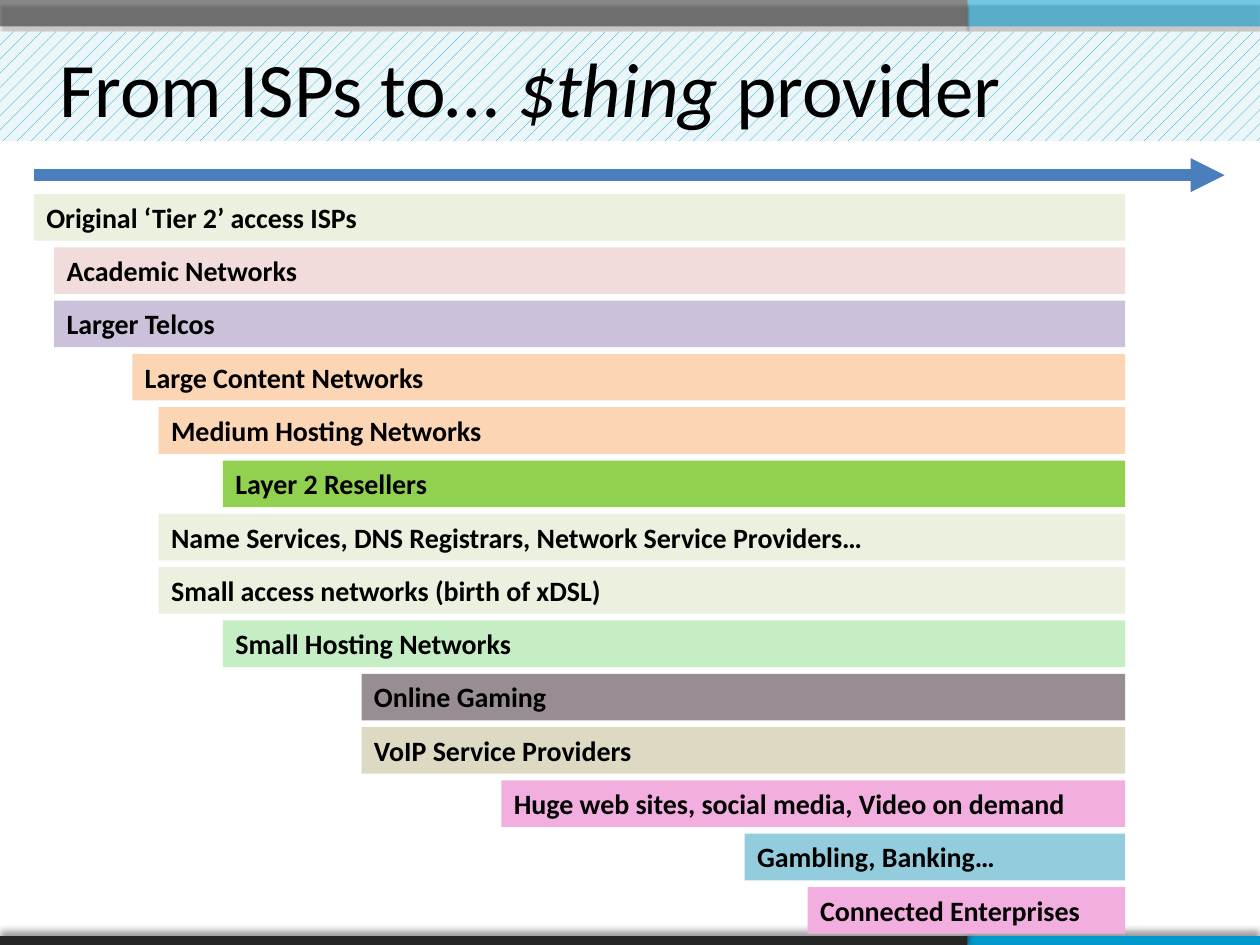
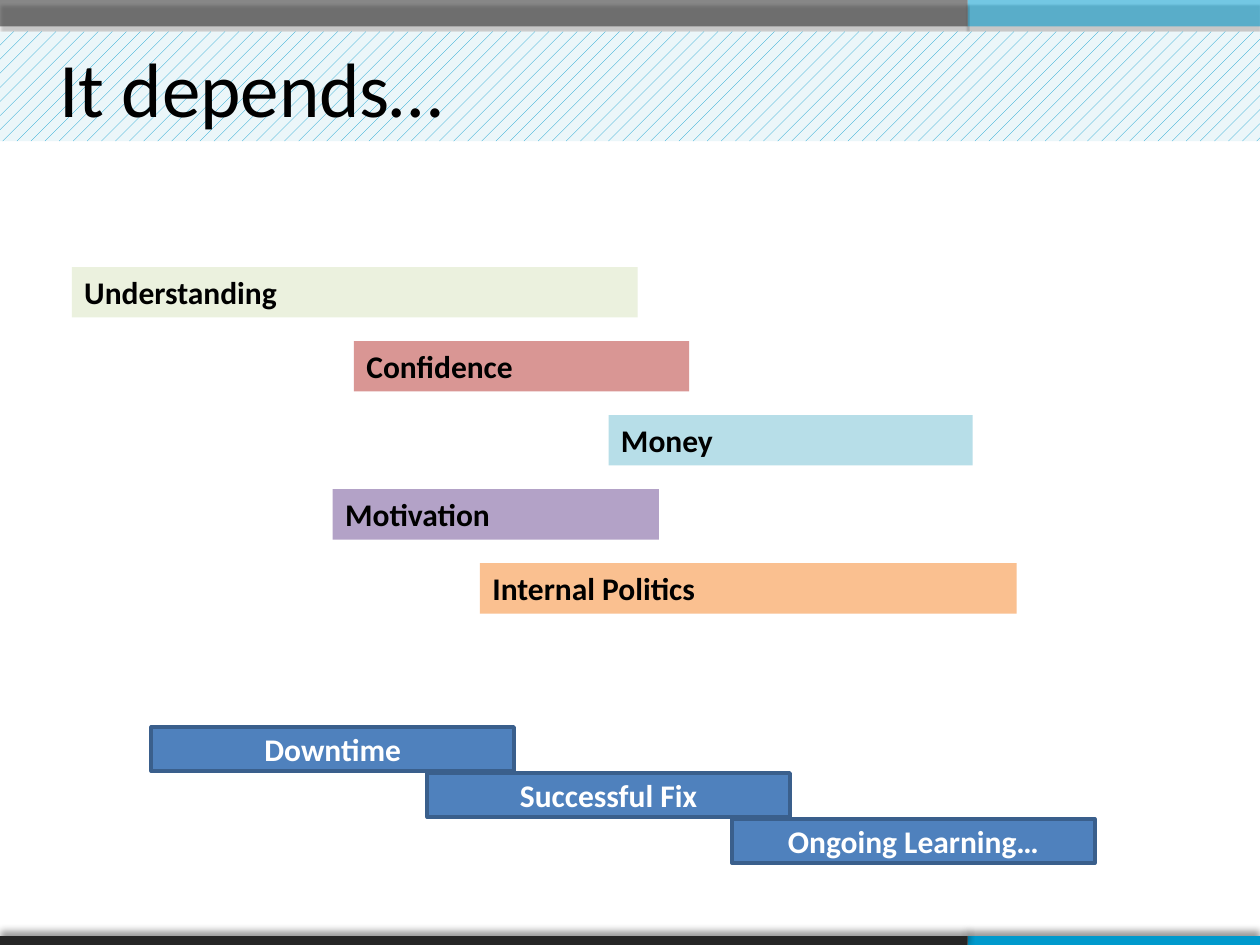
from dataclasses import dataclass
from typing import Optional

from lxml import etree
from pptx import Presentation
from pptx.dml.color import RGBColor
from pptx.enum import dml, shapes, text
from pptx.oxml import ns
from pptx.slide import Slide
from pptx import util as u

FONT = "Calibri"
BLACK = RGBColor(0x00, 0x00, 0x00)
WHITE = RGBColor(0xFF, 0xFF, 0xFF)
CHARCOAL = RGBColor(0x26, 0x26, 0x26)
CYAN = RGBColor(0x00, 0x99, 0xCC)
ICE = RGBColor(0xEB, 0xF6, 0xF9)
ARROW_BLUE = RGBColor(0x4B, 0x7E, 0xBC)
STEP_BLUE = RGBColor(0x4F, 0x81, 0xBD)
STEP_EDGE = RGBColor(0x3A, 0x5F, 0x8C)
PALE_GREEN = RGBColor(0xEB, 0xF1, 0xDE)
PALE_RED = RGBColor(0xF2, 0xDC, 0xDB)
LILAC = RGBColor(0xCC, 0xC1, 0xDA)
PEACH = RGBColor(0xFC, 0xD5, 0xB5)
LIME = RGBColor(0x92, 0xD0, 0x50)
MINT = RGBColor(0xC6, 0xEE, 0xC4)
TAUPE = RGBColor(0x97, 0x8D, 0x93)
SAND = RGBColor(0xDD, 0xD9, 0xC3)
PINK = RGBColor(0xF2, 0xAE, 0xDF)
SKY = RGBColor(0x93, 0xCD, 0xDD)
ROSE = RGBColor(0xD9, 0x96, 0x94)
PALE_BLUE = RGBColor(0xB7, 0xDE, 0xE8)
PURPLE = RGBColor(0xB3, 0xA2, 0xC7)
ORANGE = RGBColor(0xFA, 0xC0, 0x90)

SLIDE_WIDTH = 10
BAND_SPLIT = 7.68
PROVIDER_RIGHT = 8.93
PROVIDER_TOP, PROVIDER_PITCH = 1.54, 5.5 / 13
FACTOR_TOP, FACTOR_PITCH = 2.12, 2.35 / 4
STEP_TOP, STEP_PITCH = 5.77, 0.73 / 2
STEP_WIDTH, STEP_HEIGHT = 2.88, 0.35


@dataclass(frozen=True)
class Edge:
    top: float
    height: float
    blur: int
    distance: int
    angle: int
    opacity: Optional[int] = None


@dataclass(frozen=True)
class Bar:
    label: str
    left: float
    right: float
    color: RGBColor


@dataclass(frozen=True)
class Span:
    words: str
    italic: bool = False


EDGES = [
    Edge(7.43, 0.1, blur=4, distance=3, angle=270),
    Edge(0, 0.21, blur=1, distance=3, angle=90, opacity=55),
]

PROVIDERS = [
    Bar(label, left, PROVIDER_RIGHT, color)
    for label, left, color in [
        ("Original ‘Tier 2’ access ISPs", 0.27, PALE_GREEN),
        ("Academic Networks", 0.43, PALE_RED),
        ("Larger Telcos", 0.43, LILAC),
        ("Large Content Networks", 1.05, PEACH),
        ("Medium Hosting Networks", 1.26, PEACH),
        ("Layer 2 Resellers", 1.77, LIME),
        ("Name Services, DNS Registrars, Network Service Providers…", 1.26, PALE_GREEN),
        ("Small access networks (birth of xDSL)", 1.26, PALE_GREEN),
        ("Small Hosting Networks", 1.77, MINT),
        ("Online Gaming", 2.87, TAUPE),
        ("VoIP Service Providers", 2.87, SAND),
        ("Huge web sites, social media, Video on demand", 3.98, PINK),
        ("Gambling, Banking…", 5.91, SKY),
        ("Connected Enterprises", 6.41, PINK),
    ]
]

FACTORS = [
    Bar("Understanding", 0.57, 5.06, PALE_GREEN),
    Bar("Confidence", 2.81, 5.47, ROSE),
    Bar("Money", 4.83, 7.72, PALE_BLUE),
    Bar("Motivation", 2.64, 5.23, PURPLE),
    Bar("Internal Politics", 3.81, 8.07, ORANGE),
]

STEPS = [("Downtime", 1.2), ("Successful Fix", 3.39), ("Ongoing Learning…", 5.81)]


def add_child(parent, tag: str, **attributes):
    values = {name: str(value) for name, value in attributes.items()}
    return etree.SubElement(parent, ns.qn(tag), values)


def add_span(para, words: str, size: int, color: RGBColor, bold: bool = False, italic: bool = False) -> None:
    span = para.add_run()
    span.text = words
    span.font.name = FONT
    span.font.size = u.Pt(size)
    span.font.bold = bold
    span.font.italic = italic
    span.font.color.rgb = color


def add_rectangle(page: Slide, left: float, top: float, width: float, height: float, color: RGBColor):
    box = page.shapes.add_shape(
        shapes.MSO_SHAPE.RECTANGLE, u.Inches(left), u.Inches(top), u.Inches(width), u.Inches(height)
    )
    box.shadow.inherit = False
    box.fill.solid()
    box.fill.fore_color.rgb = color
    box.line.fill.background()
    return box


def add_edge(page: Slide, edge: Edge) -> None:
    tree = page.slide_layout.shapes.element
    for left, right, color in [(BAND_SPLIT, SLIDE_WIDTH, CYAN), (0, BAND_SPLIT, CHARCOAL)]:
        band = add_rectangle(page, left, edge.top, right - left, edge.height, color)
        properties = band.element.spPr
        if edge.opacity is not None:
            fill_color = properties.find(ns.qn("a:solidFill"))[0]
            add_child(fill_color, "a:alpha", val=edge.opacity * 1000)
        shadow = add_child(
            properties.find(ns.qn("a:effectLst")),
            "a:outerShdw",
            blurRad=u.Pt(edge.blur),
            dist=u.Pt(edge.distance),
            dir=edge.angle * 60000,
            rotWithShape=0,
        )
        shadow_color = add_child(shadow, "a:srgbClr", val=BLACK)
        add_child(shadow_color, "a:alpha", val=40000)
        band.element.nvSpPr.cNvPr.set("id", str(100 + len(tree)))
        tree.append(band.element)


def set_title(page: Slide, spans: list[Span]) -> None:
    title = page.shapes.title
    title.left, title.top = u.Inches(0), u.Inches(0.25)
    title.width, title.height = u.Inches(SLIDE_WIDTH), u.Inches(0.87)
    title.fill.patterned()
    title.fill.pattern = dml.MSO_PATTERN.PERCENT_10
    title.fill.fore_color.rgb = CYAN
    title.fill.back_color.rgb = ICE
    frame = title.text_frame
    frame.auto_size = text.MSO_AUTO_SIZE.NONE
    frame.vertical_anchor = text.MSO_ANCHOR.MIDDLE
    frame.margin_left, frame.margin_right = u.Inches(0.47), u.Inches(0.1)
    frame.margin_top = frame.margin_bottom = u.Inches(0)
    para = frame.paragraphs[0]
    para.alignment = text.PP_ALIGN.LEFT
    for span in spans:
        add_span(para, span.words, 44, BLACK, italic=span.italic)


def add_bars(page: Slide, bars: list[Bar], top: float, pitch: float, height: float, size: int) -> None:
    for row, bar in enumerate(bars):
        box = page.shapes.add_textbox(
            u.Inches(bar.left), u.Inches(top + row * pitch), u.Inches(bar.right - bar.left), u.Inches(height)
        )
        box.fill.solid()
        box.fill.fore_color.rgb = bar.color
        box.text_frame.word_wrap = True
        box.text_frame.auto_size = text.MSO_AUTO_SIZE.SHAPE_TO_FIT_TEXT
        add_span(box.text_frame.paragraphs[0], bar.label, size, BLACK, bold=True)


def add_time_arrow(page: Slide) -> None:
    height = u.Inches(1.39)
    arrow = page.shapes.add_connector(
        shapes.MSO_CONNECTOR.STRAIGHT, u.Inches(0.27), height, u.Inches(9.72), height
    )
    arrow.line.color.rgb = ARROW_BLUE
    arrow.line.width = u.Pt(6.5)
    properties = arrow.element.spPr
    add_child(properties.find(ns.qn("a:ln")), "a:tailEnd", type="triangle")
    add_child(properties, "a:effectLst")


def add_steps(page: Slide) -> None:
    for row, (label, left) in enumerate(STEPS):
        box = add_rectangle(page, left, STEP_TOP + row * STEP_PITCH, STEP_WIDTH, STEP_HEIGHT, STEP_BLUE)
        box.line.color.rgb = STEP_EDGE
        box.line.width = u.Pt(2)
        box.text_frame.vertical_anchor = text.MSO_ANCHOR.MIDDLE
        para = box.text_frame.paragraphs[0]
        para.alignment = text.PP_ALIGN.CENTER
        add_span(para, label, 18, WHITE, bold=True)


def main() -> None:
    deck = Presentation()
    deck.slide_width, deck.slide_height = u.Inches(SLIDE_WIDTH), u.Inches(7.5)
    title_only = deck.slide_layouts[5]

    providers = deck.slides.add_slide(title_only)
    for edge in EDGES:
        add_edge(providers, edge)
    set_title(providers, [Span("From ISPs to… "), Span("$thing", italic=True), Span(" provider")])
    add_time_arrow(providers)
    add_bars(providers, PROVIDERS, PROVIDER_TOP, PROVIDER_PITCH, 0.37, 16)

    depends = deck.slides.add_slide(title_only)
    set_title(depends, [Span("It depends…")])
    add_bars(depends, FACTORS, FACTOR_TOP, FACTOR_PITCH, 0.4, 18)
    add_steps(depends)

    deck.save("out.pptx")


if __name__ == "__main__":
    main()
